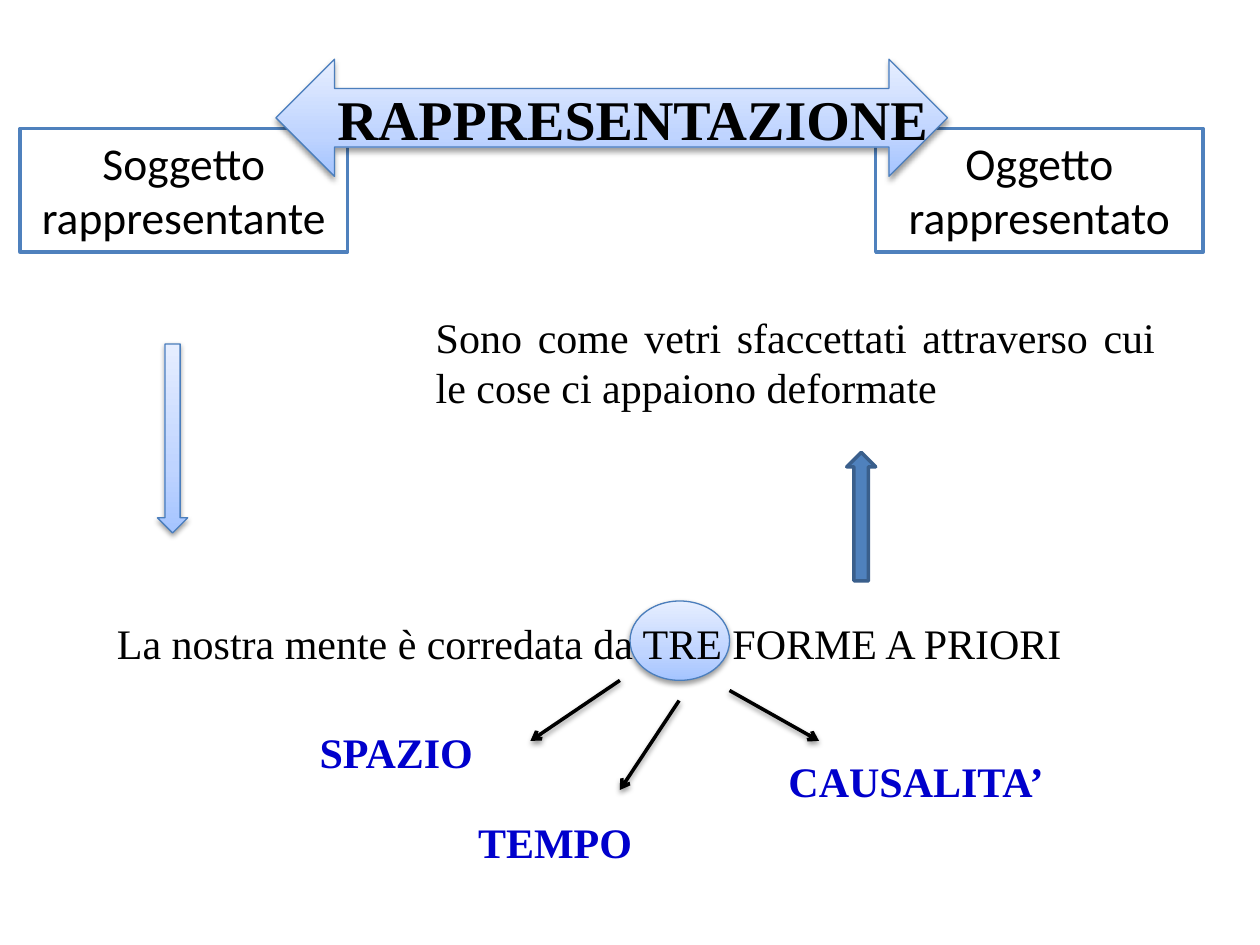
"""Build a slide on representation: subject, object and the three a priori forms."""
import lxml.etree
import pptx
import pptx.dml.color
import pptx.enum.shapes
import pptx.enum.text
import pptx.oxml
import pptx.oxml.ns
import pptx.util

Inches, Pt = pptx.util.Inches, pptx.util.Pt
KIND = pptx.enum.shapes.MSO_SHAPE
ALIGN = pptx.enum.text.PP_ALIGN
SHADOW = (
    f'<a:effectLst {pptx.oxml.ns.nsdecls("a")}>'
    '<a:outerShdw blurRad="39370" dist="20320" dir="5400000" rotWithShape="0">'
    '<a:srgbClr val="000000"><a:alpha val="38000"/></a:srgbClr>'
    '</a:outerShdw></a:effectLst>'
)
GRADIENT = [(0, "A4C4FF"), (0.35, "BFD4FF"), (1, "E6EEFF")]


def color(value):
    return pptx.dml.color.RGBColor.from_string(value)


def write(s, text, align, **font):
    tf = s.text_frame
    frame = {
        "word_wrap": True,
        "auto_size": pptx.enum.text.MSO_AUTO_SIZE.SHAPE_TO_FIT_TEXT,
        "vertical_anchor": pptx.enum.text.MSO_ANCHOR.TOP,
    }
    for name, value in frame.items():
        setattr(tf, name, value)
    p = tf.paragraphs[0]
    p.alignment = align
    r = p.add_run()
    r.text = text
    rgb = font.pop("rgb", "000000")
    for name, value in font.items():
        setattr(r.font, name, value)
    r.font.color.rgb = color(rgb)


prs = pptx.Presentation()
prs.slide_width, prs.slide_height = Inches(10), Inches(7.5)
slide = prs.slides.add_slide(prs.slide_layouts[6])

shapes = [
    (KIND.RECTANGLE, (0.16, 1.02, 2.6, 0.98), "FFFFFF", "4F81BD", 2, "Soggetto rappresentante"),
    (KIND.RECTANGLE, (6.95, 1.02, 2.6, 0.98), "FFFFFF", "4F81BD", 2, "Oggetto rappresentato"),
    (KIND.OVAL, (5, 4.77, 0.79, 0.63), None, "4B7EBC", 0.75, ""),
    (KIND.LEFT_RIGHT_ARROW, (2.19, 0.47, 5.33, 0.93), None, "4B7EBC", 0.75, ""),
    (KIND.DOWN_ARROW, (1.25, 2.73, 0.24, 1.5), None, "4B7EBC", 0.75, ""),
    (KIND.UP_ARROW, (6.72, 3.59, 0.23, 1.02), "4F81BD", "3A5F8C", 2, ""),
]
for kind, place, fill, line, width, text in shapes:
    s = slide.shapes.add_shape(kind, *map(Inches, place))
    s.line.color.rgb = color(line)
    s.line.width = Pt(width)
    if fill:
        s.fill.solid()
        s.fill.fore_color.rgb = color(fill)
        s.shadow.inherit = False
    else:
        s.fill.gradient()
        s.fill.gradient_angle = 90
        stops = s._element.spPr.find(".//" + pptx.oxml.ns.qn("a:gsLst"))
        lxml.etree.SubElement(stops, pptx.oxml.ns.qn("a:gs"))
        for stop, (position, value) in zip(s.fill.gradient_stops, GRADIENT):
            stop.position = position
            stop.color.rgb = color(value)
        s._element.spPr.append(pptx.oxml.parse_xml(SHADOW))
    if text:
        write(s, text, ALIGN.CENTER, size=Pt(26), name="Calibri")

arrows = [
    (4.92, 5.4, 4.21, 5.88),
    (5.39, 5.56, 4.92, 6.27),
    (5.79, 5.48, 6.5, 5.88),
]
for ends in arrows:
    s = slide.shapes.add_connector(pptx.enum.shapes.MSO_CONNECTOR.STRAIGHT, *map(Inches, ends))
    s.line.color.rgb = color("000000")
    s.line.width = Pt(2)
    ln = s._element.spPr.find(pptx.oxml.ns.qn("a:ln"))
    lxml.etree.SubElement(ln, pptx.oxml.ns.qn("a:tailEnd"), type="arrow")
    s._element.spPr.append(pptx.oxml.parse_xml(SHADOW))

title = {"size": Pt(32), "bold": True}
body = {"size": Pt(24)}
form = {"size": Pt(24), "bold": True, "rgb": "0000CC"}
texts = [
    ((2.58, 0.62, 4.92, 0.64), "RAPPRESENTAZIONE", ALIGN.JUSTIFY, title),
    ((0.83, 4.85, 7.87, 0.5), "La nostra mente è corredata da TRE FORME A PRIORI", ALIGN.JUSTIFY, body),
    ((2.32, 5.72, 1.65, 0.5), "SPAZIO", ALIGN.CENTER, form),
    ((3.58, 6.43, 1.65, 0.5), "TEMPO", ALIGN.CENTER, form),
    ((6.1, 5.95, 2.34, 0.5), "CAUSALITA’", ALIGN.CENTER, form),
    (
        (3.36, 2.42, 5.91, 0.91),
        "Sono come vetri sfaccettati attraverso cui le cose ci appaiono deformate",
        ALIGN.JUSTIFY,
        body,
    ),
]
for place, text, align, font in texts:
    s = slide.shapes.add_textbox(*map(Inches, place))
    write(s, text, align, name="Times New Roman", **font)

prs.save("out.pptx")
